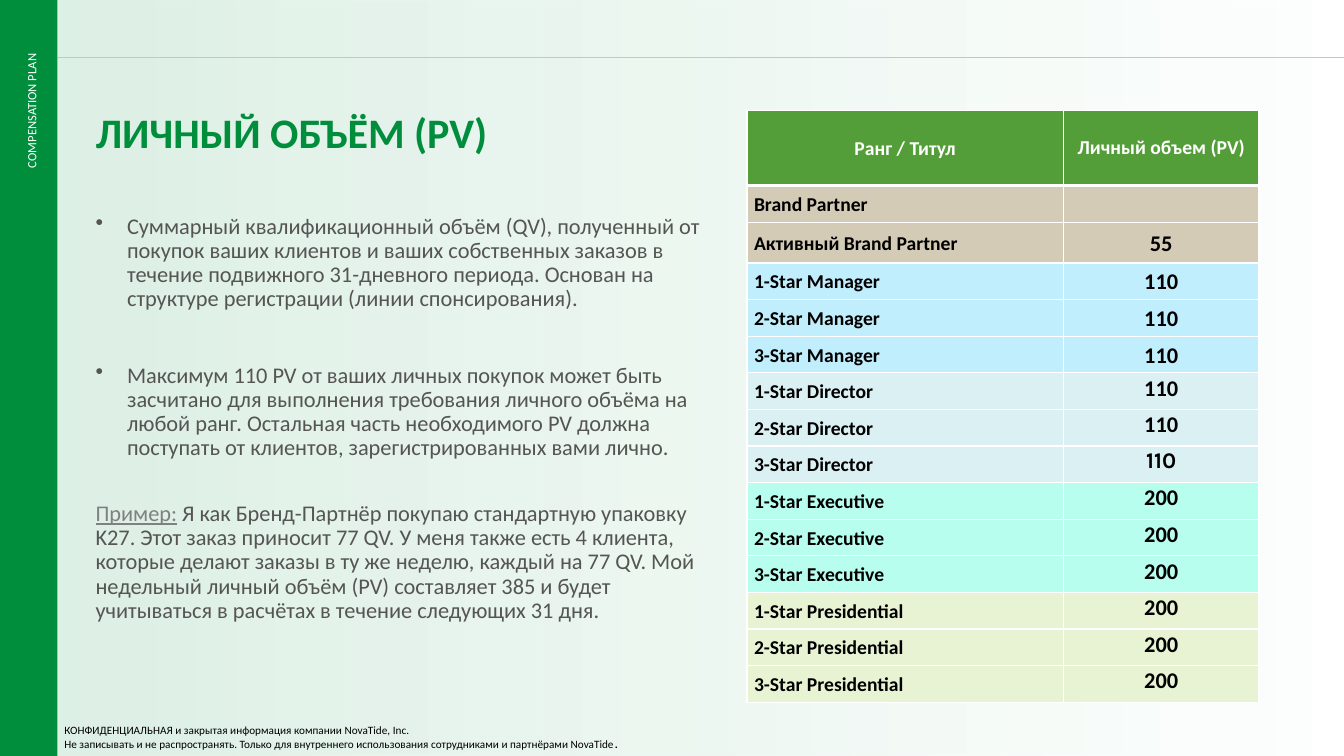
import pptx
import pptx.dml.color
import pptx.enum.shapes
import pptx.enum.text
import pptx.oxml
import pptx.oxml.ns
import pptx.util

Pt = pptx.util.Pt
ALIGN = pptx.enum.text.PP_ALIGN
ANCHOR = pptx.enum.text.MSO_ANCHOR
GREEN, GREY, WHITE, BLACK = "008E3D", "555552", "FFFFFF", "000000"
BODY = {"size": Pt(16), "color": GREY}
LABEL = {"size": Pt(14), "bold": True, "color": BLACK}
VALUE = {**LABEL, "size": Pt(16)}
HEADING = {**LABEL, "color": WHITE}
SMALL = {"size": Pt(8), "color": BLACK}
CELL_PARA = {"line_spacing": 1.07, "space_after": Pt(8)}
VALUE_PARA = {**CELL_PARA, "alignment": ALIGN.CENTER}

DEFINITION = (
    "Суммарный квалификационный объём (QV), полученный от покупок ваших клиентов "
    "и ваших собственных заказов в течение подвижного 31-дневного периода. "
    "Основан на структуре регистрации (линии спонсирования)."
)
LIMIT = (
    "Максимум 110 PV от ваших личных покупок может быть засчитано для выполнения "
    "требования личного объёма на любой ранг. Остальная часть необходимого PV "
    "должна поступать от клиентов, зарегистрированных вами лично."
)
EXAMPLE = (
    " Я как Бренд-Партнёр покупаю стандартную упаковку K27. Этот заказ приносит "
    "77 QV. У меня также есть 4 клиента, которые делают заказы в ту же неделю, "
    "каждый на 77 QV. Мой недельный личный объём (PV) составляет 385 и будет "
    "учитываться в расчётах в течение следующих 31 дня."
)
TIERS = [
    ("Manager", "110", "C1EEFC", ANCHOR.MIDDLE),
    ("Director", "110", "DBF0F3", ANCHOR.TOP),
    ("Executive", "200", "B8FEEF", ANCHOR.TOP),
    ("Presidential", "200", "E8F3D4", ANCHOR.TOP),
]


def color(code):
    """Turn a hex string into a colour."""
    return pptx.dml.color.RGBColor.from_string(code)


def assign(target, values):
    """Set attributes of an object from a dict."""
    for name, value in values.items():
        setattr(target, name, value)


def set_alpha(shape, percents):
    """Give each explicit colour of a shape its opacity."""
    codes = list(shape._element.iter(pptx.oxml.ns.qn("a:srgbClr")))
    for code, percent in zip(codes, percents):
        alpha = pptx.oxml.parse_xml(f'<a:alpha {pptx.oxml.ns.nsdecls("a")} val="{percent * 1000}"/>')
        code.append(alpha)


def add_band(slide, left, width):
    """Add a full-height rectangle without outline."""
    band = slide.shapes.add_shape(
        pptx.enum.shapes.MSO_SHAPE.RECTANGLE, Pt(left), 0, Pt(width), Pt(540))
    band.shadow.inherit = False
    band.line.fill.background()
    return band


def add_rule(slide, code):
    """Add the thin horizontal line at the top."""
    rule = slide.shapes.add_connector(
        pptx.enum.shapes.MSO_CONNECTOR.STRAIGHT, Pt(40.5), Pt(41), Pt(960), Pt(41))
    rule.line.color.rgb = color(code)
    rule.line.width = Pt(0.5)
    effects = pptx.oxml.parse_xml(f'<a:effectLst {pptx.oxml.ns.nsdecls("a")}/>')
    rule._element.spPr.append(effects)
    return rule


def add_span(para, text, style):
    """Add a run of text with font values."""
    span = para.add_run()
    span.text = text
    font = {"name": "Calibri", **style}
    span.font.color.rgb = color(font.pop("color"))
    assign(span.font, font)


def fill_text(frame, paras):
    """Write paragraphs given as (format, spans) pairs."""
    for index, (layout, spans) in enumerate(paras):
        para = frame.add_paragraph() if index else frame.paragraphs[0]
        assign(para, layout)
        for text, style in spans:
            add_span(para, text, style)


def add_text(slide, place, paras):
    """Add a wrapping text box."""
    box = slide.shapes.add_textbox(*map(Pt, place))
    box.text_frame.word_wrap = True
    fill_text(box.text_frame, paras)
    return box


def add_bullet(para):
    """Give a paragraph a hanging bullet."""
    properties = para._p.get_or_add_pPr()
    properties.set("marL", str(Pt(22.5)))
    properties.set("indent", str(-Pt(22.5)))
    bullet = pptx.oxml.parse_xml(f'<a:buChar {pptx.oxml.ns.nsdecls("a")} char="•"/>')
    properties.append(bullet)


def set_cell(cell, fill, anchor, layout, spans, bottom=1):
    """Format a table cell with white borders and write its text."""
    for side in "LRTB":
        width = Pt(bottom if side == "B" else 1)
        border = pptx.oxml.parse_xml(
            f'<a:ln{side} {pptx.oxml.ns.nsdecls("a")} w="{width}"><a:solidFill>'
            f'<a:srgbClr val="{WHITE}"/></a:solidFill></a:ln{side}>')
        cell._tc.get_or_add_tcPr().append(border)
    cell.fill.solid()
    cell.fill.fore_color.rgb = color(fill)
    assign(cell, {"vertical_anchor": anchor, "margin_left": Pt(5.1),
                  "margin_right": Pt(5.1), "margin_top": 0, "margin_bottom": 0})
    fill_text(cell.text_frame, [(layout, spans)])


def add_rank_table(slide):
    """Add the table of ranks and personal volumes."""
    ranks = [("Brand Partner", "", "D3CBB6", ANCHOR.MIDDLE),
             ("Активный Brand Partner", "55", "D3CBB6", ANCHOR.MIDDLE)]
    ranks += [(f"{star}-Star {tier}", *rest) for tier, *rest in TIERS for star in (1, 2, 3)]
    heights = [53.3, 26.6, 28.8] + [26.15] * 12
    frame = slide.shapes.add_table(
        len(heights), 2, Pt(533.5), Pt(79.2), Pt(365.8), Pt(sum(heights)))
    table = frame.table
    assign(table, {"first_row": False, "horz_banding": False})
    for column, width in zip(table.columns, (226.1, 139.7)):
        column.width = Pt(width)
    for row, height in zip(table.rows, heights):
        row.height = Pt(height)
    headings = [("Ранг / Титул", VALUE_PARA), ("Личный объем (PV)", {"alignment": ALIGN.CENTER})]
    for column, (text, layout) in enumerate(headings):
        set_cell(table.cell(0, column), "549E39", ANCHOR.MIDDLE, layout, [(text, HEADING)], 3)
    for row, (rank, volume, fill, anchor) in enumerate(ranks, 1):
        set_cell(table.cell(row, 0), fill, ANCHOR.MIDDLE, CELL_PARA, [(rank, LABEL)])
        style = {**VALUE, "name": "Karla"} if rank == "3-Star Director" else VALUE
        spans = [(volume, style)] if volume else []
        set_cell(table.cell(row, 1), fill, anchor, VALUE_PARA, spans)


def set_title(slide):
    """Place and format the slide title."""
    title = slide.shapes.title
    assign(title, {"left": Pt(61.2), "top": Pt(76.3), "width": Pt(453.6), "height": Pt(35.3)})
    assign(title.text_frame, {"vertical_anchor": ANCHOR.TOP, "word_wrap": True,
                              "auto_size": pptx.enum.text.MSO_AUTO_SIZE.NONE})
    style = {"size": Pt(30), "bold": True, "color": GREEN}
    fill_text(title.text_frame, [({"alignment": ALIGN.LEFT, "line_spacing": 0.9},
                                  [("ЛИЧНЫЙ ОБЪЁМ (PV)", style)])])
    slide.shapes._spTree.append(title._element)


def add_backdrop(slide):
    """Add the tinted background, side band and top lines."""
    tint = add_band(slide, 41, 919)
    tint.fill.gradient()
    tint.fill.gradient_angle = 0
    for stop, position in zip(tint.fill.gradient_stops, (0, 0.99)):
        stop.color.rgb = color(GREEN)
        stop.position = position
    set_alpha(tint, (13, 0))
    add_rule(slide, "BFBFBF")
    side = add_band(slide, 0, 41)
    side.fill.solid()
    side.fill.fore_color.rgb = color(GREEN)
    section = add_text(slide, (-36.7, 81.4, 118.1, 18), [
        ({"alignment": ALIGN.RIGHT}, [("COMPENSATION PLAN", {"size": Pt(9), "color": WHITE})])])
    section.rotation = 270
    set_alpha(add_rule(slide, WHITE), (18,))


def main():
    """Build and save the slide."""
    deck = pptx.Presentation()
    assign(deck, {"slide_width": Pt(960), "slide_height": Pt(540)})
    slide = deck.slides.add_slide(deck.slide_layouts[5])
    add_backdrop(slide)
    spacing = {"line_spacing": 0.9}
    example = [("Пример:", {**BODY, "color": "808080", "underline": True}), (EXAMPLE, BODY)]
    body = add_text(slide, (61.2, 149.8, 453.6, 342), [
        (spacing, [(DEFINITION, BODY)]),
        ({**spacing, "space_before": Pt(37.5)}, [(LIMIT, BODY)]),
        ({**spacing, "space_before": Pt(29.75)}, example)])
    for para in body.text_frame.paragraphs[:2]:
        add_bullet(para)
    set_title(slide)
    add_rank_table(slide)
    add_text(slide, (38.9, 513.4, 431.3, 26.6), [
        ({}, [("КОНФИДЕНЦИАЛЬНАЯ и закрытая информация компании NovaTide, Inc.", SMALL)]),
        ({}, [("Не записывать и не распространять. Только для внутреннего использования "
               "сотрудниками и партнёрами NovaTide", SMALL), (".", {**SMALL, "bold": True})])])
    deck.save("out.pptx")


if __name__ == "__main__":
    main()
